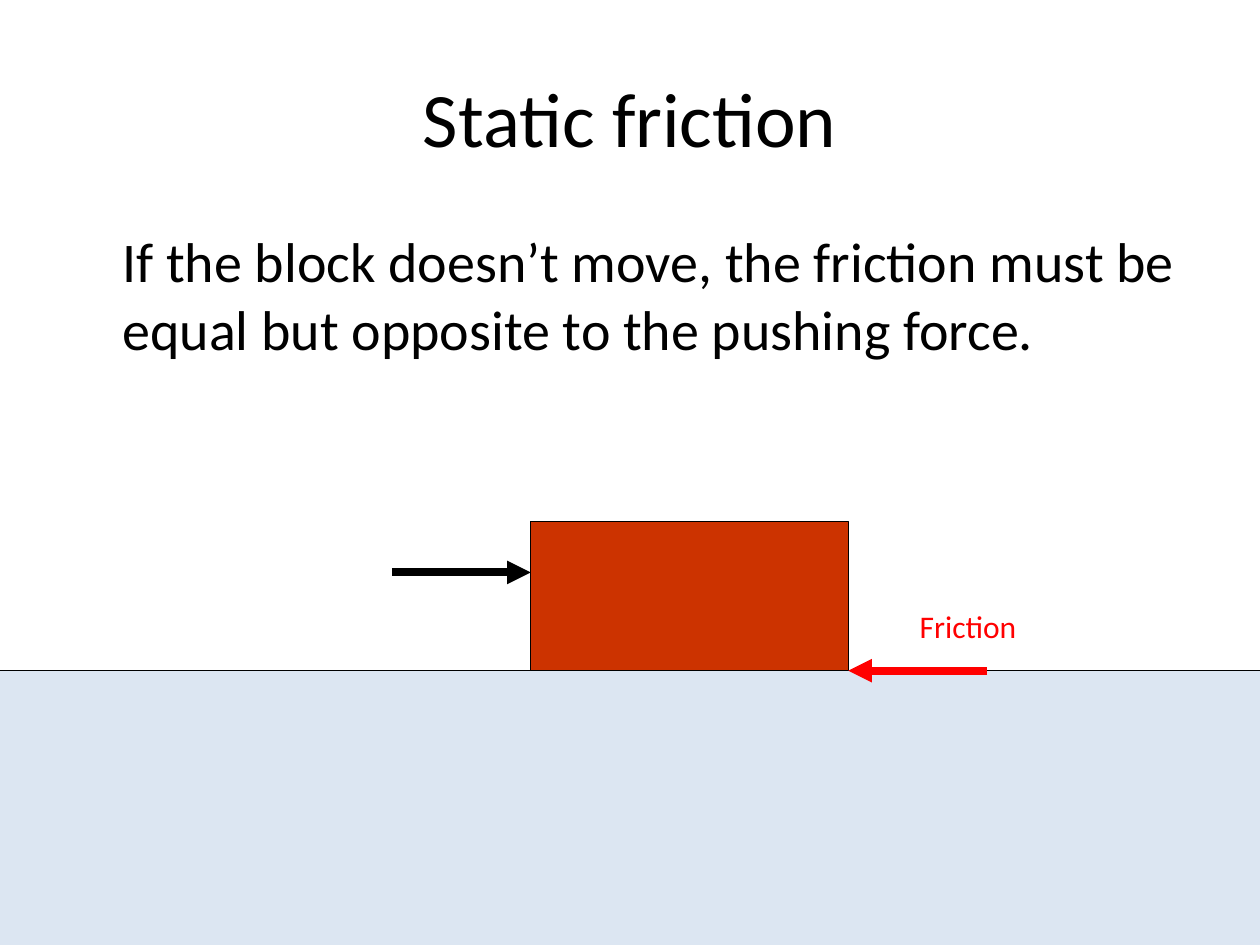
from pptx import Presentation
from pptx.dml.color import RGBColor
from pptx.enum import shapes, text
from pptx.oxml import ns
from pptx.util import Cm, Pt
from lxml import etree

COLORS = {"ink": "000000", "ground": "DCE6F2", "block": "CC3300", "friction": "FF0000"}
FONT = "Calibri"


def rgb(name):
    """Return the named palette colour."""
    return RGBColor.from_string(COLORS[name])


def add_text(s, box, content, size, color="ink", align=text.PP_ALIGN.LEFT,
             anchor=text.MSO_ANCHOR.TOP, indent=0):
    """Place one wrapped paragraph in a box, indented by a length in cm."""
    tf = s.shapes.add_textbox(*map(Cm, box)).text_frame
    tf.word_wrap = True
    tf.vertical_anchor = anchor
    p = tf.paragraphs[0]
    p.text = content
    p.alignment = align
    if indent:
        p._p.get_or_add_pPr().set("marL", str(Cm(indent)))
    r = p.runs[0]
    r.font.name, r.font.size = FONT, Pt(size)
    r.font.color.rgb = rgb(color)


def add_rect(s, box, fill):
    """Draw a thinly outlined rectangle."""
    sp = s.shapes.add_shape(shapes.MSO_SHAPE.RECTANGLE, *map(Cm, box))
    sp.shadow.inherit = False
    sp.fill.solid()
    sp.fill.fore_color.rgb = rgb(fill)
    sp.line.color.rgb = rgb("ink")
    sp.line.width = Pt(0.75)


def add_force(s, x, tip, y, color):
    """Draw a thick horizontal arrow from x to its tip."""
    arrow = s.shapes.add_connector(
        shapes.MSO_CONNECTOR.STRAIGHT, Cm(x), Cm(y), Cm(tip), Cm(y))
    arrow.line.color.rgb = rgb(color)
    arrow.line.width = Pt(4.5)
    ln = arrow.line._get_or_add_ln()
    etree.SubElement(ln, ns.qn("a:tailEnd"), type="triangle")
    etree.SubElement(arrow._element.spPr, ns.qn("a:effectLst"))


def add_heading(s, box):
    """Place the centred slide title."""
    add_text(s, box, "Static friction", 44,
             align=text.PP_ALIGN.CENTER, anchor=text.MSO_ANCHOR.MIDDLE)


def add_statement(s, box):
    """Place the statement about balanced forces."""
    add_text(s, box, "If the block doesn’t move, the friction must be "
             "equal but opposite to the pushing force.", 32, indent=0.95)


def add_diagram(s, box):
    """Draw the block on the ground with the push and friction forces."""
    left, top, width, height = box
    block_w, block_h, force = 6.4, 3, 2.8
    block_x = left + 11.2
    block_right = block_x + block_w
    floor = top + block_h
    add_rect(s, (left, floor, width, height - block_h), "ground")
    add_rect(s, (block_x, top, block_w, block_h), "block")
    add_force(s, block_x - force, block_x, top + 1.02, "ink")
    add_force(s, block_right + force, block_right, floor, "friction")
    add_text(s, (block_right + 1.19, floor - 1.4, 4.4, 1.02),
             "Friction", 18, "friction")


def main():
    """Build and save the slide."""
    prs = Presentation()
    prs.slide_width, prs.slide_height = Cm(25.4), Cm(19.05)
    s = prs.slides.add_slide(prs.slide_layouts[6])
    add_heading(s, (1.27, 0.76, 22.86, 3.18))
    add_statement(s, (1.27, 4.45, 22.86, 12.57))
    add_diagram(s, (-0.5, 10.52, 26.4, 8.78))
    prs.save("out.pptx")


if __name__ == "__main__":
    main()
